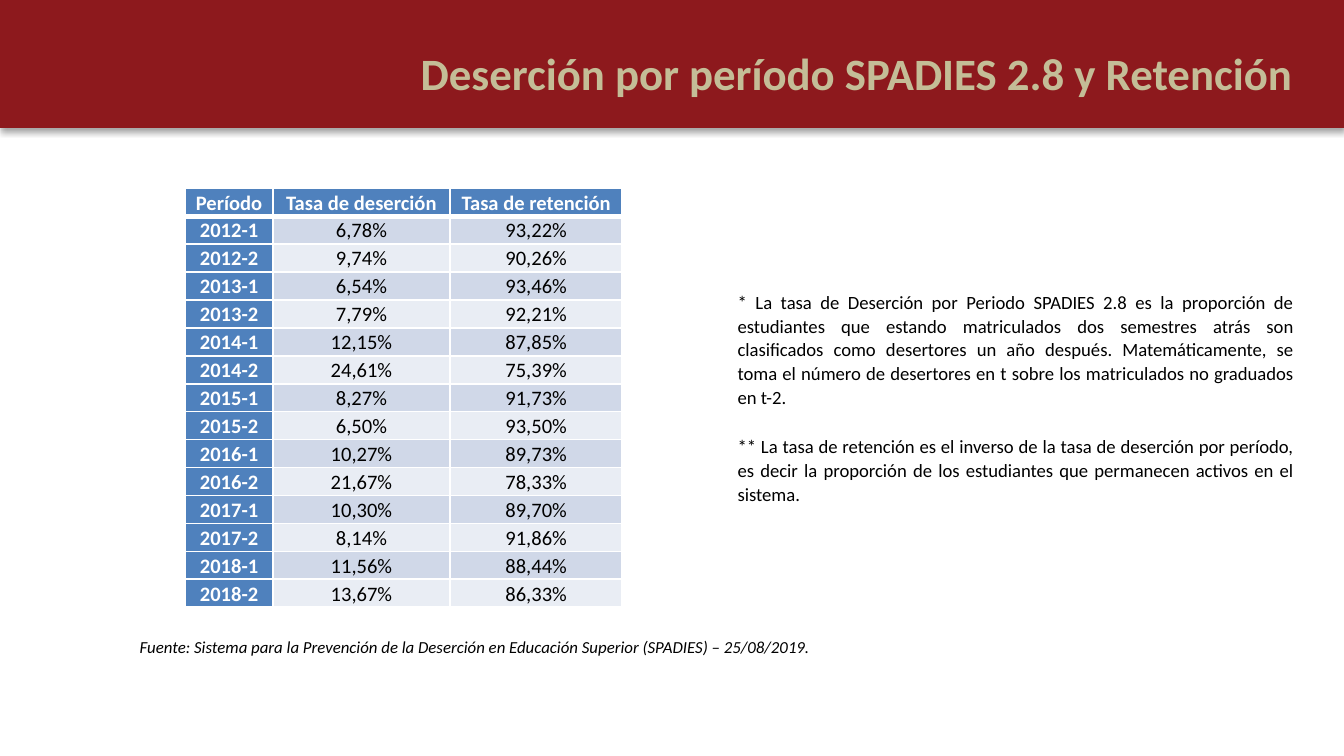
from lxml import etree
from pptx import Presentation
from pptx.dml.color import RGBColor
from pptx.enum.shapes import MSO_SHAPE
from pptx.enum.text import MSO_ANCHOR, PP_ALIGN
from pptx.oxml import parse_xml
from pptx.oxml.ns import nsdecls, qn
from pptx.util import Inches, Pt

RECTANGLE = MSO_SHAPE.RECTANGLE
TOP, MIDDLE = MSO_ANCHOR.TOP, MSO_ANCHOR.MIDDLE
LEFT, CENTER, JUSTIFY = PP_ALIGN.LEFT, PP_ALIGN.CENTER, PP_ALIGN.JUSTIFY

RED = RGBColor(0x8D, 0x19, 0x1D)
TAN = RGBColor(0xC4, 0xBD, 0x97)
BLUE = RGBColor(0x4F, 0x81, 0xBD)
DARK_BAND = RGBColor(0xD0, 0xD8, 0xE8)
LIGHT_BAND = RGBColor(0xE9, 0xED, 0xF4)
WHITE = RGBColor(0xFF, 0xFF, 0xFF)
BLACK = RGBColor(0, 0, 0)

LINE_SPACING = 1.07


def write_paragraph(para, text, color, align, line_spacing, **font_format):
    para.alignment = align
    para.line_spacing = line_spacing
    span = para.add_run()
    span.text = text
    span.font.name = "Calibri"
    span.font.color.rgb = color
    for name, value in font_format.items():
        setattr(span.font, name, value)


def add_border(cell, side, width):
    line = etree.SubElement(cell.fill._xPr, qn(f"a:ln{side}"), w=str(Pt(width)))
    fill = etree.SubElement(line, qn("a:solidFill"))
    etree.SubElement(fill, qn("a:srgbClr"), val=str(WHITE))


# Widescreen deck, 16:9
deck = Presentation()
deck.slide_width = Inches(10)
deck.slide_height = deck.slide_width * 9 // 16
slide = deck.slides.add_slide(deck.slide_layouts[5])
shapes = slide.shapes

# Title
title = shapes.title
title.left, title.top = Inches(3.03), Inches(0.29)
title.width, title.height = Inches(6.85), Inches(0.5)
title.text_frame.word_wrap = True
title.text_frame.vertical_anchor = TOP
write_paragraph(title.text_frame.paragraphs[0],
                "Deserción por período SPADIES 2.8 y Retención",
                TAN, LEFT, 1.0, size=Pt(24), bold=True)

# Red band with a soft shadow, behind the title
band = shapes.add_shape(RECTANGLE, 0, 0, deck.slide_width, Inches(0.95))
band.fill.solid()
band.fill.fore_color.rgb = RED
band.line.color.rgb = RED
band.line.width = Pt(0.75)
band.shadow.inherit = False
band.element.spPr.find(qn("a:effectLst")).append(parse_xml(
    f'<a:outerShdw {nsdecls("a")} blurRad="{Pt(3.1)}" dist="{Pt(1.8)}" '
    'dir="5400000" rotWithShape="0">'
    '<a:srgbClr val="000000"><a:alpha val="35000"/></a:srgbClr></a:outerShdw>'))
title.element.addprevious(band.element)

# Rates table
rates = [
    ("Período", "Tasa de deserción", "Tasa de retención"),
    ("2012-1", "6,78%", "93,22%"),
    ("2012-2", "9,74%", "90,26%"),
    ("2013-1", "6,54%", "93,46%"),
    ("2013-2", "7,79%", "92,21%"),
    ("2014-1", "12,15%", "87,85%"),
    ("2014-2", "24,61%", "75,39%"),
    ("2015-1", "8,27%", "91,73%"),
    ("2015-2", "6,50%", "93,50%"),
    ("2016-1", "10,27%", "89,73%"),
    ("2016-2", "21,67%", "78,33%"),
    ("2017-1", "10,30%", "89,70%"),
    ("2017-2", "8,14%", "91,86%"),
    ("2018-1", "11,56%", "88,44%"),
    ("2018-2", "13,67%", "86,33%"),
]
cell_format = {
    "margin_left": Inches(0.07), "margin_right": Inches(0.07),
    "margin_top": 0, "margin_bottom": 0, "vertical_anchor": MIDDLE,
}
table = shapes.add_table(len(rates), 3, Inches(1.38), Inches(1.4),
                         Inches(3.25), Inches(3.12)).table
table.first_col = True
for column, width in zip(table.columns, (0.65, 1.32, 1.28)):
    column.width = Inches(width)

for row_index, row in enumerate(rates):
    for column_index, text in enumerate(row):
        cell = table.cell(row_index, column_index)
        is_heading = row_index == 0 or column_index == 0
        for name, value in cell_format.items():
            setattr(cell, name, value)
        add_border(cell, "L", 1)
        add_border(cell, "R", 1)
        if row_index == 0:
            add_border(cell, "T", 1)
        add_border(cell, "B", 3 if row_index == 0 else 1)
        cell.fill.solid()
        band_color = DARK_BAND if row_index % 2 else LIGHT_BAND
        cell.fill.fore_color.rgb = BLUE if is_heading else band_color
        write_paragraph(cell.text_frame.paragraphs[0], text,
                        WHITE if is_heading else BLACK, CENTER, LINE_SPACING,
                        size=Pt(11), bold=is_heading)

# Source line
source_box = shapes.add_textbox(Inches(0.35), Inches(4.68), Inches(6.36), Inches(0.26))
source_box.text_frame.word_wrap = True
write_paragraph(source_box.text_frame.paragraphs[0],
                "Fuente: Sistema para la Prevención de la Deserción en Educación "
                "Superior (SPADIES) – 25/08/2019.",
                BLACK, CENTER, LINE_SPACING, size=Pt(9), italic=True)

# Definitions of both rates
notes = [
    "* La tasa de Deserción por Periodo SPADIES 2.8 es la proporción de estudiantes "
    "que estando matriculados dos semestres atrás son clasificados como desertores "
    "un año después. Matemáticamente, se toma el número de desertores en t sobre "
    "los matriculados no graduados en t-2.",
    "** La tasa de retención es el inverso de la tasa de deserción por período, es "
    "decir la proporción de los estudiantes que permanecen activos en el sistema.",
]
notes_box = shapes.add_textbox(Inches(5.39), Inches(2.1), Inches(4.33), Inches(1.71))
notes_frame = notes_box.text_frame
notes_frame.word_wrap = True
for index, note in enumerate(notes):
    para = notes_frame.add_paragraph() if index else notes_frame.paragraphs[0]
    if index:
        para.space_before = Pt(13)
    write_paragraph(para, note, BLACK, JUSTIFY, LINE_SPACING, size=Pt(10))

deck.save("out.pptx")
